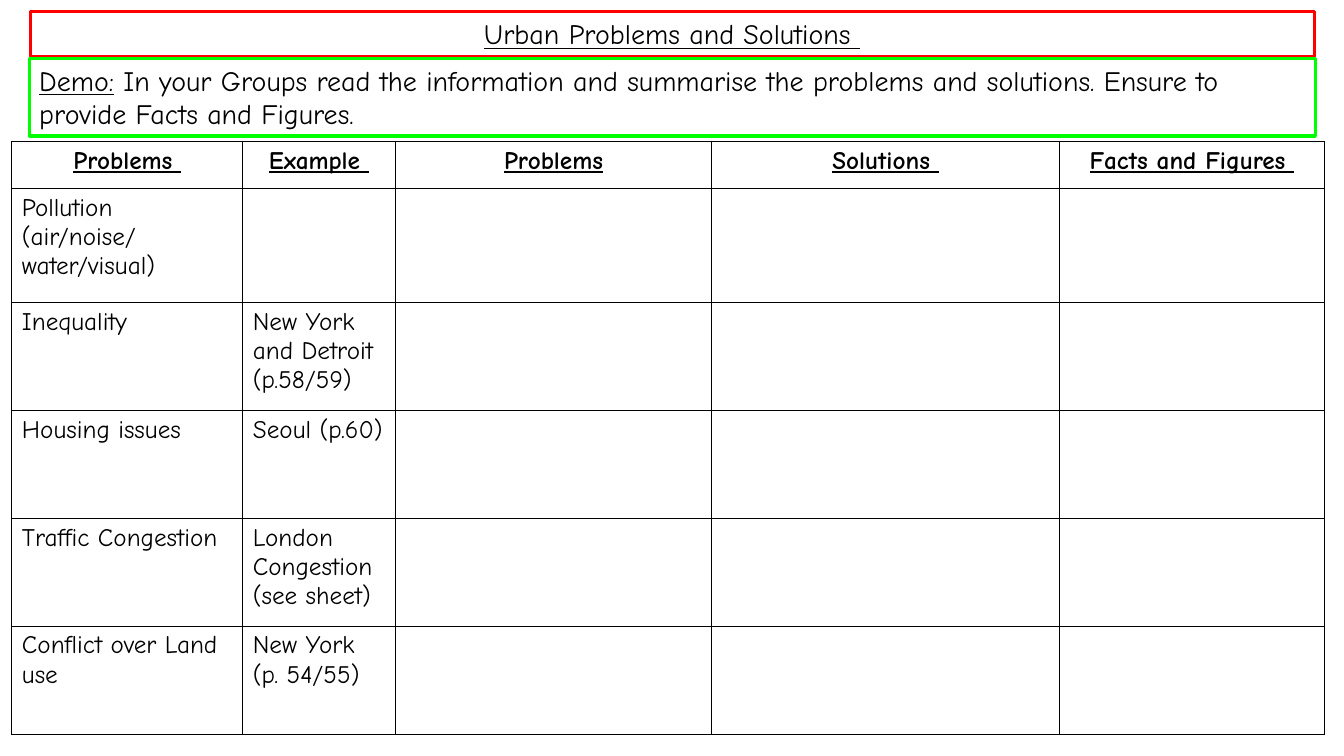
from dataclasses import dataclass

from lxml.etree import SubElement
from pptx import Presentation
from pptx.dml.color import RGBColor
from pptx.enum.shapes import MSO_SHAPE
from pptx.enum.text import MSO_ANCHOR, MSO_AUTO_SIZE, PP_ALIGN
from pptx.oxml.ns import qn
from pptx.util import Cm, Pt


@dataclass(frozen=True)
class Theme:
    """Colours, font and sizes of the worksheet."""
    font: str = "Comic Neue"
    ink: str = "000000"
    title_frame: str = "FF0000"
    task_frame: str = "00FF00"
    heading_size: int = 20
    table_size: int = 18
    frame_width: float = 2.25
    grid_width: float = 1


def add_text(paragraph, text, theme, size, bold=False, underline=False, align=PP_ALIGN.LEFT):
    """Append a formatted run to a paragraph."""
    paragraph.alignment = align
    run = paragraph.add_run()
    run.text = text
    font = run.font
    font.name, font.size = theme.font, Pt(size)
    font.bold, font.underline = bold, underline
    font.color.rgb = RGBColor.from_string(theme.ink)


class Worksheet:
    """Draws the elements of a worksheet slide in one style."""

    def __init__(self, slide, theme):
        """Keep the slide and its style."""
        self.slide = slide
        self.theme = theme

    def frame(self, shape, color):
        """Give a shape a coloured outline and wrapped text."""
        shape.fill.background()
        shape.line.color.rgb = RGBColor.from_string(color)
        shape.line.width = Pt(self.theme.frame_width)
        text_frame = shape.text_frame
        text_frame.word_wrap = True
        text_frame.auto_size = MSO_AUTO_SIZE.NONE
        text_frame.vertical_anchor = MSO_ANCHOR.TOP
        return text_frame.paragraphs[0]

    def title(self, text, left, top, width, height):
        """Place the framed slide title."""
        shape = self.slide.shapes.title
        shape.left, shape.top = Cm(left), Cm(top)
        shape.width, shape.height = Cm(width), Cm(height)
        paragraph = self.frame(shape, self.theme.title_frame)
        add_text(paragraph, text, self.theme, self.theme.heading_size,
                 underline=True, align=PP_ALIGN.CENTER)

    def task(self, label, text, left, top, width, height):
        """Add the framed task with its underlined label."""
        shape = self.slide.shapes.add_shape(
            MSO_SHAPE.RECTANGLE, Cm(left), Cm(top), Cm(width), Cm(height))
        shape.shadow.inherit = False
        paragraph = self.frame(shape, self.theme.task_frame)
        add_text(paragraph, label, self.theme, self.theme.heading_size, underline=True)
        add_text(paragraph, text, self.theme, self.theme.heading_size)

    def border(self, cell):
        """Draw the four borders of a cell."""
        properties = cell._tc.get_or_add_tcPr()
        for side in ("a:lnL", "a:lnR", "a:lnT", "a:lnB"):
            line = SubElement(properties, qn(side), w=str(Pt(self.theme.grid_width)))
            fill = SubElement(line, qn("a:solidFill"))
            SubElement(fill, qn("a:srgbClr"), val=self.theme.ink)

    def table(self, rows, left, top, widths, heights):
        """Add a ruled table whose first row holds the headings."""
        table = self.slide.shapes.add_table(
            len(heights), len(widths), Cm(left), Cm(top),
            Cm(sum(widths)), Cm(sum(heights))).table
        table.first_row = table.horz_banding = False
        for column, width in zip(table.columns, widths):
            column.width = Cm(width)
        for row, height in zip(table.rows, heights):
            row.height = Cm(height)
        for row_index, texts in enumerate(rows):
            heading = row_index == 0
            align = PP_ALIGN.CENTER if heading else PP_ALIGN.LEFT
            for column_index in range(len(widths)):
                cell = table.cell(row_index, column_index)
                self.border(cell)
                cell.fill.background()
                if column_index < len(texts) and texts[column_index]:
                    add_text(cell.text_frame.paragraphs[0], texts[column_index],
                             self.theme, self.theme.table_size,
                             bold=heading, underline=heading, align=align)


PROBLEM_ROWS = [
    ["Problems ", "Example ", "Problems", "Solutions ", "Facts and Figures "],
    ["Pollution (air/noise/ water/visual)"],
    ["Inequality", "New York and Detroit (p.58/59)"],
    ["Housing issues", "Seoul (p.60)"],
    ["Traffic Congestion", "London Congestion (see sheet)"],
    ["Conflict over Land use", "New York (p. 54/55)"],
]


def main():
    """Build and save the worksheet."""
    presentation = Presentation()
    presentation.slide_width, presentation.slide_height = Cm(33.87), Cm(19.05)
    slide = presentation.slides.add_slide(presentation.slide_layouts.get_by_name("Title Only"))
    worksheet = Worksheet(slide, Theme())
    worksheet.title("Urban Problems and Solutions ", 0.76, 0.3, 32.36, 1.12)
    worksheet.task(
        "Demo:",
        " In your Groups read the information and summarise the problems and solutions."
        " Ensure to provide Facts and Figures.",
        0.74, 1.47, 32.41, 1.96)
    worksheet.table(PROBLEM_ROWS, 0.3, 3.56,
                    widths=[5.82, 3.84, 7.98, 8.76, 6.68],
                    heights=[1.19, 2.87] + [2.72] * 4)
    presentation.save("out.pptx")


if __name__ == "__main__":
    main()
